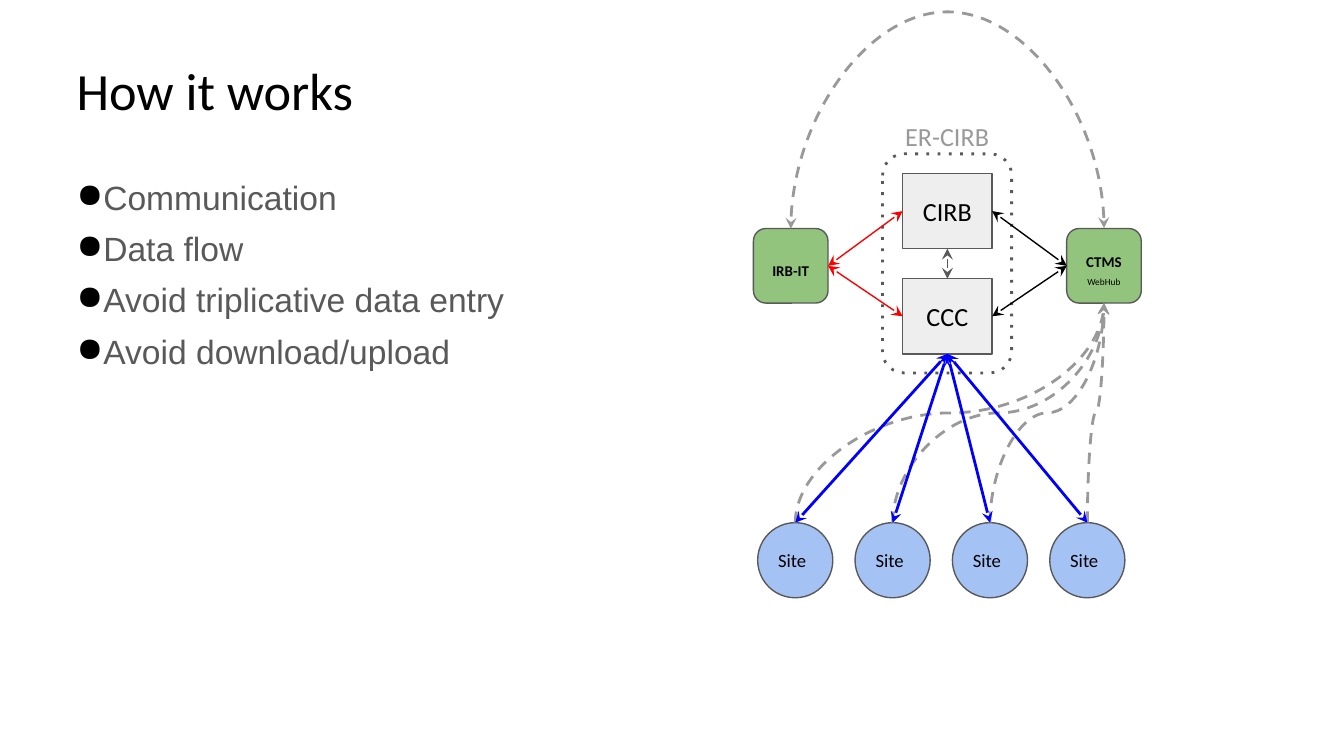
import pptx
import pptx.util
import pptx.dml.color
import pptx.enum.shapes
import pptx.enum.text
import pptx.oxml.ns
from lxml import etree

Cm = pptx.util.Cm
Pt = pptx.util.Pt
Shape = pptx.enum.shapes.MSO_SHAPE
Route = pptx.enum.shapes.MSO_CONNECTOR
Anchor = pptx.enum.text.MSO_ANCHOR
CENTER = pptx.enum.text.PP_ALIGN.CENTER
TOP, LEFT, BOTTOM, RIGHT = range(4)


def color(hex_code):
    return pptx.dml.color.RGBColor.from_string(hex_code)


def child(parent, tag, **attributes):
    return etree.SubElement(parent, pptx.oxml.ns.qn(tag), **attributes)


def write(frame, text, size=14, font="Calibri", ink="000000", bold=False, align=None,
          anchor=Anchor.MIDDLE, inset=0.18, spacing=None, before=0, bullet=None, note=None):
    frame.word_wrap = True
    frame.vertical_anchor = anchor
    frame.margin_left = frame.margin_right = Cm(0.18)
    frame.margin_top = frame.margin_bottom = Cm(inset)
    for index, line in enumerate(text.split("\n")):
        paragraph = frame.add_paragraph() if index else frame.paragraphs[0]
        paragraph.alignment = align
        paragraph.line_spacing = spacing
        if index:
            paragraph.space_before = Pt(before)
        pieces = [(line, size, bold)] + ([(note, 5, False)] if note else [])
        for words, points, heavy in pieces:
            run = paragraph.add_run()
            run.text = words
            run.font.name = font
            run.font.size = Pt(points)
            run.font.bold = heavy
            run.font.color.rgb = color(ink)
        if bullet:
            properties = paragraph._p.get_or_add_pPr()
            properties.set("marL", str(Cm(0.48)))
            properties.set("indent", str(-Cm(0.48)))
            child(child(properties, "a:buClr"), "a:srgbClr", val="000000")
            child(properties, "a:buChar", char=bullet)


class Diagram:
    gray = "595959"
    pale = "999999"

    def __init__(self, slide):
        self.shapes = slide.shapes

    def text(self, box, words, **style):
        write(self.shapes.add_textbox(*map(Cm, box)).text_frame, words, **style)

    def stroke(self, line, ink, width, dash=None):
        line.color.rgb = color(ink)
        line.width = Pt(width)
        outline = line._get_or_add_ln()
        if dash:
            child(outline, "a:prstDash", val=dash)
        return outline

    def node(self, kind, box, words="", fill=None, width=0.75, dash=None, **style):
        node = self.shapes.add_shape(kind, *map(Cm, box))
        node.shadow.inherit = False
        if fill:
            node.fill.solid()
            node.fill.fore_color.rgb = color(fill)
        else:
            node.fill.background()
        self.stroke(node.line, self.gray, width, dash)
        if words:
            write(node.text_frame, words, **style)
        return node

    def link(self, start, start_side, end, end_side, ink, width=0.75, dash=None,
             route=Route.STRAIGHT, turn=None, bend=0.5, both=True):
        link = self.shapes.add_connector(route, 0, 0, 0, 0)
        link.begin_connect(start, start_side)
        link.end_connect(end, end_side)
        outline = self.stroke(link.line, ink, width, dash)
        if both:
            child(outline, "a:headEnd", type="stealth")
        child(outline, "a:tailEnd", type="stealth")
        child(link._element.spPr, "a:effectLst")
        if turn:
            self.turn(link, turn, bend)

    def turn(self, link, degrees, bend):
        center_x = (link.begin_x + link.end_x) // 2
        center_y = (link.begin_y + link.end_y) // 2
        width, height = max(link.height, Cm(0.01)), link.width
        frame = link._element.spPr.xfrm
        for flip in ("flipH", "flipV"):
            frame.attrib.pop(flip, None)
        frame.set("rot", str(degrees * 60000))
        link.left, link.top = center_x - width // 2, center_y - height // 2
        link.width, link.height = width, height
        geometry = link._element.spPr.find(pptx.oxml.ns.qn("a:prstGeom"))
        guides = geometry.find(pptx.oxml.ns.qn("a:avLst"))
        child(guides, "a:gd", name="adj1", fmla=f"val {round(bend * 100000)}")


def main():
    deck = pptx.Presentation()
    deck.slide_width, deck.slide_height = Cm(25.4), Cm(14.29)
    diagram = Diagram(deck.slides.add_slide(deck.slide_layouts[6]))

    diagram.text((1.27, 0.58, 22.86, 2.39), "How it works", size=28, inset=0.1, spacing=0.9)
    diagram.text((1.27, 3.33, 22.86, 9.42),
                 "Communication\nData flow\nAvoid triplicative data entry\nAvoid download/upload",
                 size=18, font="Arial", ink=diagram.gray, anchor=Anchor.TOP, inset=0.1,
                 spacing=0.9, before=8, bullet="●")

    sites = [diagram.node(Shape.OVAL, (14.32 + 1.84 * column, 9.88, 1.42, 1.42), "Site",
                          fill="A4C2F4", size=10) for column in range(4)]
    diagram.node(Shape.ROUNDED_RECTANGLE, (16.68, 2.91, 2.44, 4.14), width=1.5, dash="dot")
    ccc, cirb = [diagram.node(Shape.RECTANGLE, (17.06, top, 1.69, 1.42), name,
                              fill="EEEEEE", align=CENTER)
                 for name, top in (("CCC", 5.27), ("CIRB", 3.28))]
    diagram.link(cirb, BOTTOM, ccc, TOP, diagram.gray, route=Route.ELBOW, turn=90)
    diagram.text((16.68, 2.29, 2.44, 0.58), "ER-CIRB", ink=diagram.pale, align=CENTER)
    ctms, irb_it = [diagram.node(Shape.ROUNDED_RECTANGLE, (left, 4.32, 1.41, 1.41), name,
                                 fill="93C47D", size=8, bold=True, align=CENTER,
                                 spacing=1.5, note=note)
                    for name, left, note in (("CTMS ", 20.16, "WebHub"), ("IRB-IT", 14.24, None))]

    for site in sites:
        diagram.link(site, TOP, ctms, BOTTOM, diagram.pale, 1.5, "dash",
                     Route.CURVE, turn=270, both=False)
    for site in sites:
        diagram.link(site, TOP, ccc, BOTTOM, "0000FF", 1.5)
    diagram.link(ctms, TOP, irb_it, TOP, diagram.pale, 1.5, "dash",
                 Route.CURVE, turn=90, bend=-409)
    for board in (cirb, ccc):
        diagram.link(irb_it, RIGHT, board, LEFT, "FF0000")
    for board in (ccc, cirb):
        diagram.link(board, RIGHT, ctms, LEFT, "000000")

    deck.save("out.pptx")


if __name__ == "__main__":
    main()
